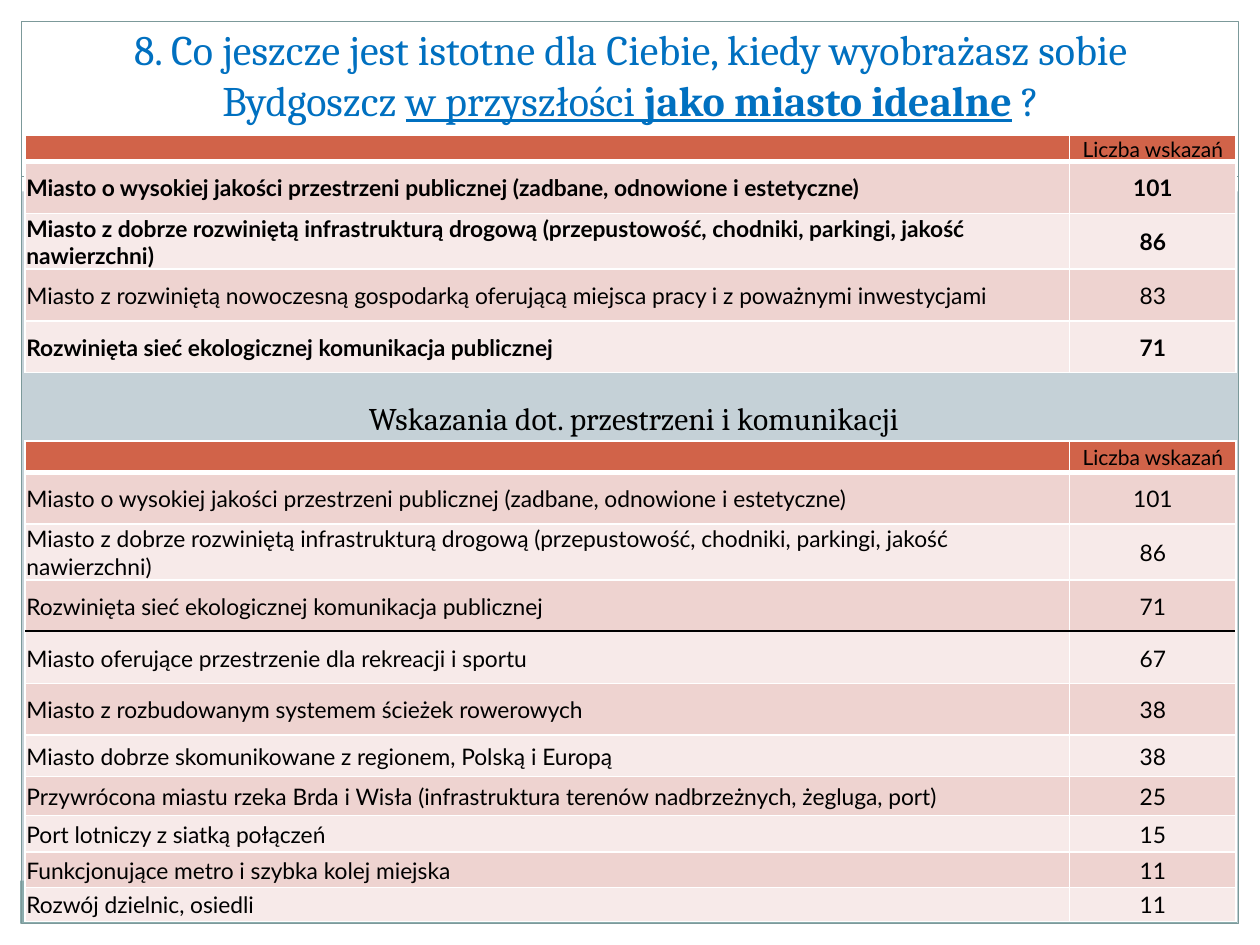
"""Build a survey slide with two tables of answer counts about the ideal city."""
import dataclasses
import typing

import lxml.etree
import pptx
import pptx.dml.color
import pptx.enum.shapes
import pptx.enum.text
import pptx.oxml.ns
import pptx.util

Inches = pptx.util.Inches
Pt = pptx.util.Pt
CENTER = pptx.enum.text.PP_ALIGN.CENTER
WHITE, BLACK, TEAL, BLUE = "FFFFFF", "000000", "7C999A", "0070C0"
HEADER_FILL, BAND_FILLS = "D16349", ("EED3D0", "F7EAE9")
HEADING_FONT, TABLE_FONT = "Cambria", "Lato"


@dataclasses.dataclass
class Panel:
    left: float
    top: float
    width: float
    height: float
    fill: typing.Optional[str] = None
    line: typing.Optional[str] = None


@dataclasses.dataclass
class Answer:
    label: str
    count: int
    height: float = 0.41
    bold: bool = False


PANELS = [
    Panel(0, 7.33, 10, 0.17, WHITE),
    Panel(0, 0, 10, 1.52, WHITE),
    Panel(0, 0, 0.17, 7.5, WHITE),
    Panel(9.83, 0, 0.17, 7.5, WHITE),
    Panel(0.16, 6.99, 9.66, 0.34, "8CADAE"),
    Panel(0.17, 0.17, 9.66, 7.16, line=TEAL),
]
QUALITY = "Miasto o wysokiej jakości przestrzeni publicznej (zadbane, odnowione i estetyczne)"
ROADS = ("Miasto z dobrze rozwiniętą infrastrukturą drogową "
         "(przepustowość, chodniki, parkingi, jakość nawierzchni)")
TRANSIT = "Rozwinięta sieć ekologicznej komunikacja publicznej"
TOP_ANSWERS = [
    Answer(QUALITY, 101, bold=True),
    Answer(ROADS, 86, bold=True),
    Answer("Miasto z rozwiniętą nowoczesną gospodarką oferującą miejsca pracy "
           "i z poważnymi inwestycjami", 83),
    Answer(TRANSIT, 71, bold=True),
]
SPACE_ANSWERS = [
    Answer(QUALITY, 101),
    Answer(ROADS, 86),
    Answer(TRANSIT, 71),
    Answer("Miasto oferujące przestrzenie dla rekreacji i sportu", 67),
    Answer("Miasto z rozbudowanym systemem ścieżek rowerowych", 38),
    Answer("Miasto dobrze skomunikowane z regionem, Polską i Europą", 38, 0.33),
    Answer("Przywrócona miastu rzeka Brda i Wisła "
           "(infrastruktura terenów nadbrzeżnych, żegluga, port)", 25, 0.31),
    Answer("Port lotniczy z siatką połączeń", 15, 0.29),
    Answer("Funkcjonujące metro i szybka kolej miejska", 11, 0.28),
    Answer("Rozwój dzielnic, osiedli", 11, 0.27),
]


def color(value: str) -> pptx.dml.color.RGBColor:
    return pptx.dml.color.RGBColor.from_string(value)


def add_element(parent, tag: str, **attributes: str):
    return lxml.etree.SubElement(parent, pptx.oxml.ns.qn(tag), attributes)


def style_span(span, font: str, size: float, tone: str) -> None:
    span.font.name = font
    span.font.size = Pt(size)
    span.font.color.rgb = color(tone)


def draw_panel(slide, panel: Panel) -> None:
    shape = slide.shapes.add_shape(
        pptx.enum.shapes.MSO_SHAPE.RECTANGLE, Inches(panel.left), Inches(panel.top),
        Inches(panel.width), Inches(panel.height))
    shape.shadow.inherit = False
    if panel.fill:
        shape.fill.solid()
        shape.fill.fore_color.rgb = color(panel.fill)
    else:
        shape.fill.background()
    if panel.line:
        shape.line.color.rgb = color(panel.line)
        shape.line.width = Pt(0.75)
    else:
        shape.line.fill.background()


def draw_rule(slide, left: float, right: float, top: float, tone: str, width: float):
    rule = slide.shapes.add_connector(
        pptx.enum.shapes.MSO_CONNECTOR.STRAIGHT,
        Inches(left), Inches(top), Inches(right), Inches(top))
    rule.line.color.rgb = color(tone)
    rule.line.width = Pt(width)
    add_element(rule._element.spPr, "a:effectLst")
    return rule


def draw_title(slide) -> None:
    title = slide.shapes.title
    title.left, title.top = Inches(0.28), Inches(0.21)
    title.width, title.height = Inches(9.45), Inches(0.83)
    slide.shapes._spTree.append(title._element)
    frame = title.text_frame
    frame.word_wrap = True
    frame.auto_size = pptx.enum.text.MSO_AUTO_SIZE.NONE
    frame.vertical_anchor = pptx.enum.text.MSO_ANCHOR.BOTTOM
    para = frame.paragraphs[0]
    para.alignment = CENTER
    for text, underline, bold in (
            ("8. Co jeszcze jest istotne dla Ciebie, kiedy wyobrażasz sobie Bydgoszcz ", False, False),
            ("w przyszłości ", True, False),
            ("jako miasto idealne", True, True),
            (" ?", False, False)):
        span = para.add_run()
        span.text = text
        style_span(span, HEADING_FONT, 24, BLUE)
        span.font.underline, span.font.bold = underline, bold


def draw_subtitle(slide) -> None:
    box = slide.shapes.add_textbox(Inches(0.77), Inches(3.12), Inches(8.52), Inches(0.4))
    box.text_frame.word_wrap = True
    box.text_frame.text = "Wskazania dot. przestrzeni i komunikacji"
    para = box.text_frame.paragraphs[0]
    para.alignment = CENTER
    style_span(para.runs[0], HEADING_FONT, 18, BLACK)


def fill_cell(cell, text: str, size: float, bold: bool, centered: bool,
              fill: str, top: float, bottom: float) -> None:
    cell.margin_left = cell.margin_right = cell.margin_top = Inches(0.01)
    cell.margin_bottom = 0
    cell.vertical_anchor = pptx.enum.text.MSO_ANCHOR.MIDDLE
    para = cell.text_frame.paragraphs[0]
    if text:
        para.text = text
        para.alignment = CENTER if centered else pptx.enum.text.PP_ALIGN.LEFT
        style_span(para.runs[0], TABLE_FONT, size, BLACK)
        para.runs[0].font.bold = bold
    else:
        add_element(para._p, "a:endParaRPr", sz=str(int(size * 100)))
    properties = cell._tc.get_or_add_tcPr()
    for side, width in (("L", 1), ("R", 1), ("T", top), ("B", bottom)):
        border = add_element(properties, f"a:ln{side}", w=str(Pt(width)))
        add_element(add_element(border, "a:solidFill"), "a:srgbClr", val=WHITE)
    cell.fill.solid()
    cell.fill.fore_color.rgb = color(fill)


def draw_table(slide, top: float, header_height: float, answers: list[Answer]) -> None:
    heights = [header_height] + [answer.height for answer in answers]
    table = slide.shapes.add_table(
        len(heights), 2, Inches(0.2), Inches(top), Inches(9.61), Inches(sum(heights))).table
    table.first_row = table.horz_banding = False
    for column, width in zip(table.columns, (8.29, 1.32)):
        column.width = Inches(width)
    for row, height in zip(table.rows, heights):
        row.height = Inches(height)
    for index, text in enumerate(("", "Liczba wskazań")):
        fill_cell(table.cell(0, index), text, 12, False, True, HEADER_FILL, 1, 3)
    for number, answer in enumerate(answers, 1):
        for index, text in enumerate((answer.label, str(answer.count))):
            fill_cell(table.cell(number, index), text, 13, answer.bold, index == 1,
                      BAND_FILLS[(number - 1) % 2], 3 if number == 1 else 1, 1)


def main() -> None:
    deck = pptx.Presentation()
    deck.slide_width, deck.slide_height = Inches(10), Inches(7.5)
    slide = deck.slides.add_slide(deck.slide_layouts[5])
    slide.background.fill.solid()
    slide.background.fill.fore_color.rgb = color("C5D1D7")
    for panel in PANELS:
        draw_panel(slide, panel)
    divider = draw_rule(slide, 0.17, 9.83, 1.4, TEAL, 0.75)
    divider.line.dash_style = pptx.enum.dml.MSO_LINE.SQUARE_DOT
    draw_title(slide)
    draw_table(slide, 1.07, 0.16, TOP_ANSWERS)
    draw_subtitle(slide)
    draw_table(slide, 3.5, 0.25, SPACE_ANSWERS)
    draw_rule(slide, 0.2, 9.8, 5.01, BLACK, 1.25)
    deck.save("out.pptx")


if __name__ == "__main__":
    main()
